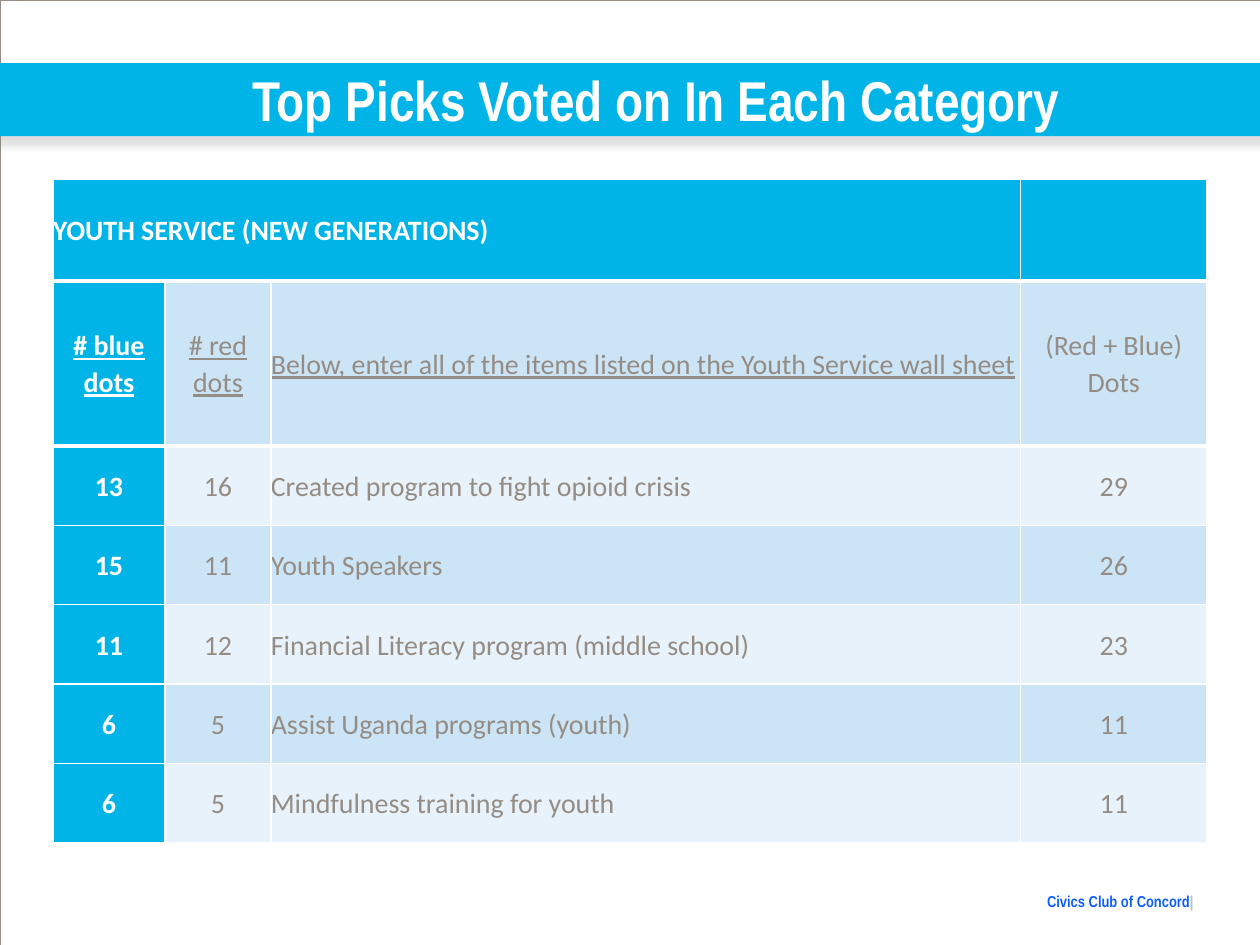
from lxml.etree import SubElement
from pptx import Presentation
from pptx.dml.color import RGBColor
from pptx.enum.shapes import MSO_SHAPE as Shape
from pptx.enum.text import MSO_ANCHOR as Anchor, PP_ALIGN as Align
from pptx.oxml import parse_xml
from pptx.oxml.ns import nsdecls, qn
from pptx.util import Inches, Pt

COLORS = {
    "cyan": "01B4E7",
    "white": "FFFFFF",
    "taupe": "958D85",
    "band_dark": "CBE5F6",
    "band_light": "E7F2FA",
    "blue": "0E5EFF",
    "silver": "BCBDC0",
    "shadow": "808080",
}
COLUMN_WIDTHS = [0.89, 0.84, 5.95, 1.48]
ROW_HEIGHTS = [0.81, 1.31] + [0.63] * 5
HEADINGS = [
    "# blue dots",
    "# red dots",
    "Below, enter all of the items listed on the Youth Service wall sheet",
    "(Red + Blue) Dots",
]
PICKS = [
    (13, 16, "Created program to fight opioid crisis"),
    (15, 11, "Youth Speakers"),
    (11, 12, "Financial Literacy program (middle school)"),
    (6, 5, "Assist Uganda programs (youth)"),
    (6, 5, "Mindfulness training for youth"),
]


def color(name):
    return RGBColor.from_string(COLORS[name])


def add_run(paragraph, text, font, size, ink, bold=False, underline=False):
    run = paragraph.add_run()
    run.text = text
    run.font.name = font
    run.font.size = Pt(size)
    run.font.color.rgb = color(ink)
    run.font.bold = bold
    run.font.underline = underline


def add_text(slide, box, align, anchor, runs):
    frame = slide.shapes.add_textbox(*map(Inches, box)).text_frame
    frame.margin_left = frame.margin_right = 0
    frame.margin_top = frame.margin_bottom = 0
    frame.word_wrap = True
    frame.vertical_anchor = anchor
    paragraph = frame.paragraphs[0]
    paragraph.alignment = align
    for text, size, ink, bold in runs:
        add_run(paragraph, text, "Arial Narrow", size, ink, bold)


def add_page_border(slide):
    border = slide.shapes.add_shape(Shape.RECTANGLE, 0, 0, Inches(10), Inches(7.5))
    border.shadow.inherit = False
    border.fill.background()
    border.line.color.rgb = color("taupe")
    border.line.width = Pt(0.25)


def add_title_band(slide):
    band = slide.shapes.add_shape(
        Shape.RECTANGLE, Inches(-0.08), Inches(0.5), Inches(10.17), Inches(0.58)
    )
    band.shadow.inherit = False
    band.fill.solid()
    band.fill.fore_color.rgb = color("cyan")
    band.line.fill.background()
    effects = band._element.spPr.find(qn("a:effectLst"))
    effects.append(parse_xml(
        f'<a:outerShdw {nsdecls("a")} blurRad="{Pt(5)}" dist="{Pt(4.8)}" '
        f'dir="5400000" algn="t" rotWithShape="0">'
        f'<a:srgbClr val="{COLORS["shadow"]}"><a:alpha val="25000"/></a:srgbClr>'
        f'</a:outerShdw>'
    ))


def set_borders(cell, top, bottom):
    properties = cell._tc.get_or_add_tcPr()
    for side, width in {"L": 1, "R": 1, "T": top, "B": bottom}.items():
        line = SubElement(properties, qn(f"a:ln{side}"), w=str(Pt(width)))
        fill = SubElement(line, qn("a:solidFill"))
        SubElement(fill, qn("a:srgbClr"), val=COLORS["white"])


def fill_cell(cell, text, fill, align, ink, bold, underline):
    cell.margin_left = cell.margin_right = 0
    cell.margin_top = cell.margin_bottom = 0
    cell.vertical_anchor = Anchor.MIDDLE
    cell.fill.solid()
    cell.fill.fore_color.rgb = color(fill)
    paragraph = cell.text_frame.paragraphs[0]
    paragraph.alignment = align
    paragraph.line_spacing = 1.07
    if text:
        add_run(paragraph, text, "Calibri", 16, ink, bold, underline)


def add_votes_table(slide):
    rows = [["YOUTH SERVICE (NEW GENERATIONS)", "", "", ""], HEADINGS]
    rows += [[str(blue), str(red), item, str(blue + red)] for blue, red, item in PICKS]
    table = slide.shapes.add_table(
        len(rows), len(COLUMN_WIDTHS),
        Inches(0.42), Inches(1.42), Inches(9.17), Inches(5.25),
    ).table
    table.horz_banding = False
    for column, width in zip(table.columns, COLUMN_WIDTHS):
        column.width = Inches(width)
    for row, height in zip(table.rows, ROW_HEIGHTS):
        row.height = Inches(height)
    table.cell(0, 0).merge(table.cell(0, 2))

    for r, texts in enumerate(rows):
        top = 3 if r in (1, 2) else 1
        bottom = 3 if r in (0, 1) else 1
        band = "band_dark" if r % 2 else "band_light"
        for c, text in enumerate(texts):
            cell = table.cell(r, c)
            strong = r == 0 or c == 0
            set_borders(cell, top, bottom)
            fill_cell(
                cell, text,
                fill="cyan" if strong else band,
                align=Align.LEFT if r == 0 or c == 2 else Align.CENTER,
                ink="white" if strong else "taupe",
                bold=strong,
                underline=r == 1 and c < 3,
            )


def main():
    deck = Presentation()
    deck.slide_width, deck.slide_height = Inches(10), Inches(7.5)
    slide = deck.slides.add_slide(deck.slide_layouts[6])
    add_text(slide, (7.75, 7.08, 1.75, 0.14), Align.RIGHT, Anchor.TOP, [
        ("Civics Club of Concord", 9, "blue", True),
        ("| ", 9, "silver", True),
    ])
    add_page_border(slide)
    add_title_band(slide)
    add_text(slide, (0.42, 0.5, 9.58, 0.58), Align.CENTER, Anchor.MIDDLE, [
        ("Top Picks Voted on In Each Category", 32, "white", True),
    ])
    add_votes_table(slide)
    deck.save("out.pptx")


if __name__ == "__main__":
    main()
